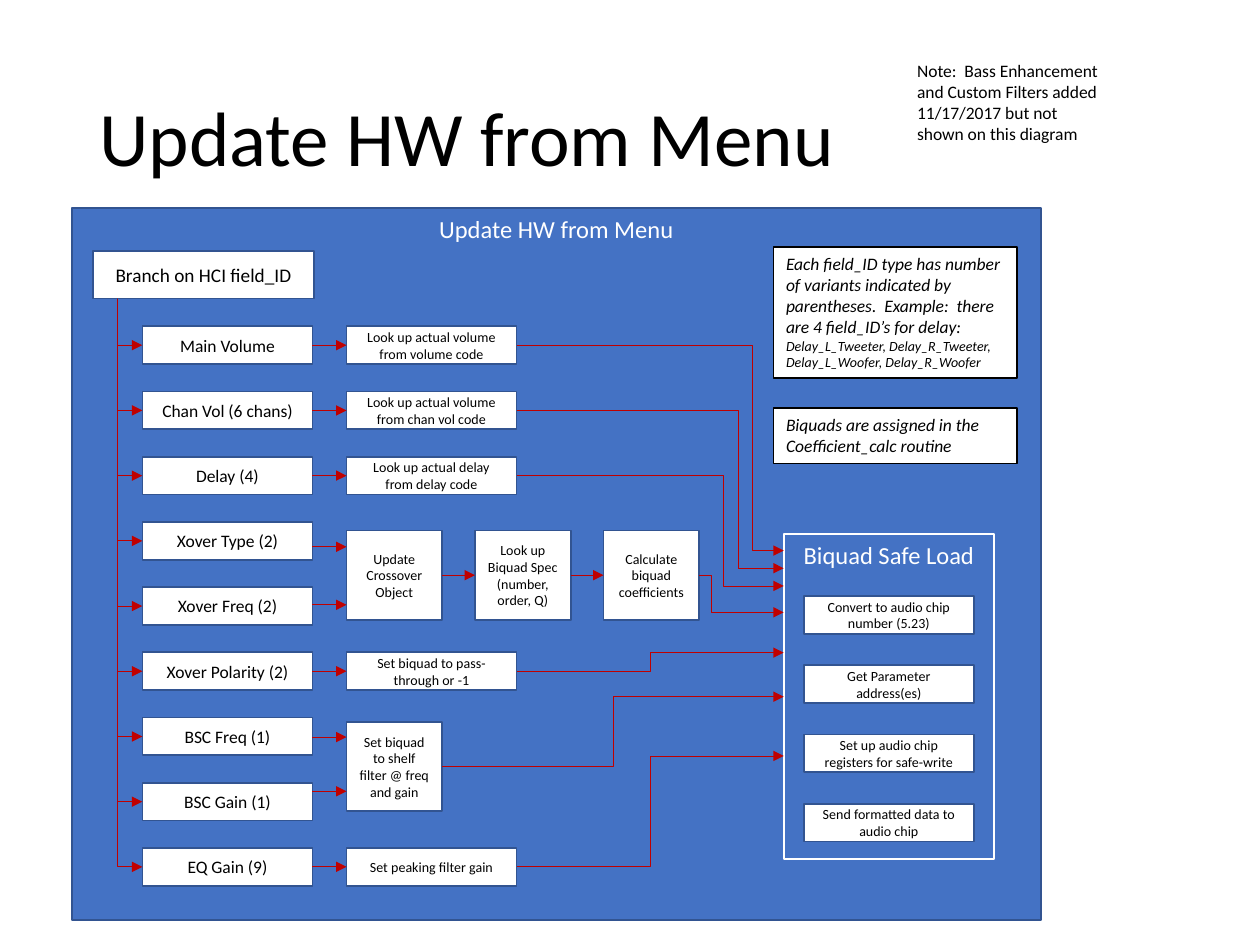
from lxml import etree
from pptx import Presentation
from pptx import util as u
from pptx.dml.color import RGBColor
from pptx.enum import shapes, text
from pptx.oxml.ns import qn

FONT = "Calibri"
BLUE, EDGE, RED = "4472C4", "325491", "C00000"
WHITE, BLACK = "FFFFFF", "000000"
ROW_W, ROW_H, ROW_PITCH = 1.35, 0.3, 4.14 / 8
SQUARE_W, SQUARE_H = 0.76, 0.71
BRANCHES = ["Main Volume", "Chan Vol (6 chans)", "Delay (4)", "Xover Type (2)", "Xover Freq (2)",
            "Xover Polarity (2)", "BSC Freq (1)", "BSC Gain (1)", "EQ Gain (9)"]
ACTIONS = {0: "Look up actual volume from volume code",
           1: "Look up actual volume from chan vol code",
           2: "Look up actual delay from delay code",
           5: "Set biquad to pass-through or -1",
           8: "Set peaking filter gain"}
CROSSOVER = ["Update Crossover Object", "Look up Biquad Spec (number, order, Q)",
             "Calculate biquad coefficients"]
LOAD_STEPS = ["Convert to audio chip number (5.23)", "Get Parameter address(es)",
              "Set up audio chip registers for safe-write", "Send formatted data to audio chip"]


def rgb(value):
    """Return the colour for a hex string."""
    return RGBColor.from_string(value)


def write(sp, runs, color=BLACK, align=text.PP_ALIGN.CENTER, anchor=text.MSO_ANCHOR.MIDDLE,
          italic=False):
    """Fill a shape with one paragraph of (words, size) runs and return it."""
    tf = sp.text_frame
    tf.word_wrap = True
    tf.vertical_anchor = anchor
    p = tf.paragraphs[0]
    p.alignment = align
    for words, size in runs:
        r = p.add_run()
        r.text = words
        r.font.name, r.font.size, r.font.italic = FONT, u.Pt(size), italic
        r.font.color.rgb = rgb(color)
    return p


def add_box(parent, box, runs, fill=WHITE, line=EDGE, **style):
    """Draw a rectangle with text and return it."""
    sp = parent.add_shape(shapes.MSO_SHAPE.RECTANGLE, *map(u.Inches, box))
    sp.shadow.inherit = False
    if fill:
        sp.fill.solid()
        sp.fill.fore_color.rgb = rgb(fill)
    else:
        sp.fill.background()
    sp.line.color.rgb = rgb(line)
    sp.line.width = u.Pt(1)
    write(sp, runs, **style)
    return sp


def add_arrow(s, start, end, bend=None):
    """Draw a red arrow, bent at the given share of its width if there is one."""
    kind = shapes.MSO_CONNECTOR.STRAIGHT if bend is None else shapes.MSO_CONNECTOR.ELBOW
    cx = s.shapes.add_connector(kind, *map(u.Inches, (*start, *end)))
    cx.line.color.rgb = rgb(RED)
    cx.line.width = u.Pt(0.5)
    props = cx._element.spPr
    etree.SubElement(props.find(qn("a:ln")), qn("a:tailEnd"), type="triangle")
    etree.SubElement(props, qn("a:effectLst"))
    if bend is not None:
        guides = props.find(qn("a:prstGeom")).find(qn("a:avLst"))
        etree.SubElement(guides, qn("a:gd"), name="adj1", fmla=f"val {round(bend * 100000)}")
    return cx


def right_middle(sp):
    """Return the middle of a shape's right side in inches."""
    return u.Length(sp.left + sp.width).inches, u.Length(sp.top + sp.height // 2).inches


def join(s, left, right):
    """Connect the facing sides of two boxes."""
    cx = add_arrow(s, right_middle(left), right_middle(right))
    cx.begin_connect(left, 3)
    cx.end_connect(right, 1)


def add_heading(s, box, words, size, anchor, align=text.PP_ALIGN.LEFT, spacing=None):
    """Place free text in its box."""
    sp = s.shapes.add_textbox(*map(u.Inches, box))
    p = write(sp, [(words, size)], anchor=anchor, align=align)
    p.line_spacing = spacing


def add_branches(s, box):
    """Draw the branch box and the rows that hang from it, and return the rows."""
    x, y, w, h = box
    add_box(s.shapes, box, [("Branch on HCI field_ID", 11)])
    rows = []
    for i, name in enumerate(BRANCHES):
        top = y + 0.6 + i * ROW_PITCH
        rows.append(add_box(s.shapes, (x + 0.39, top, ROW_W, ROW_H), [(name, 10)]))
        add_arrow(s, (x + 0.19, y + h), (x + 0.39, top + ROW_H / 2), bend=0)
    return rows


def add_actions(s, x, rows):
    """Draw the actions beside their rows and return them by row number."""
    actions = {}
    for i, words in ACTIONS.items():
        box = (x, u.Length(rows[i].top).inches, ROW_W, ROW_H)
        actions[i] = add_box(s.shapes, box, [(words, 8)])
        join(s, rows[i], actions[i])
    return actions


def add_merge(s, box, words, rows, entries):
    """Draw a box that two rows enter at the given heights, and return it."""
    sp = add_box(s.shapes, box, [(words, 8)])
    for row, y in zip(rows, entries):
        add_arrow(s, (right_middle(row)[0], y), (box[0], y))
    return sp


def add_crossover(s, box, rows):
    """Draw the chain of crossover steps and return the last one."""
    x, y, w, h = box
    last = add_merge(s, box, CROSSOVER[0], rows, (4.34, 4.8))
    for i, words in enumerate(CROSSOVER[1:], 1):
        step = add_box(s.shapes, (x + 1.02 * i, y, w, h), [(words, 8)])
        join(s, last, step)
        last = step
    return last


def add_safe_load(s, box):
    """Draw the load panel with its four steps as a group."""
    x, y, w, h = box
    group = s.shapes.add_group_shape().shapes
    for i, words in enumerate(LOAD_STEPS):
        add_box(group, (x + 0.16, y + 0.49 + 0.55 * i, ROW_W, ROW_H), [(words, 8)])
    add_box(group, box, [("Biquad Safe Load", 14)], fill=None, line=WHITE, color=WHITE,
            anchor=text.MSO_ANCHOR.TOP)


def add_routes(s, x, routes):
    """Lead each box to the load panel at x, given (box, bend x, entry y)."""
    for sp, bend_x, entry in routes:
        start = right_middle(sp)
        add_arrow(s, start, (x, entry), bend=(bend_x - start[0]) / (x - start[0]))


def add_note(s, box, runs):
    """Draw a black-edged note in italics."""
    add_box(s.shapes, box, runs, line=BLACK, align=text.PP_ALIGN.LEFT,
            anchor=text.MSO_ANCHOR.TOP, italic=True)


def add_diagram(s, box):
    """Draw the whole flow on its blue panel."""
    x, y, w, h = box
    add_box(s.shapes, box, [("Update HW from Menu", 14)], fill=BLUE, color=WHITE,
            anchor=text.MSO_ANCHOR.TOP)
    rows = add_branches(s, (x + 0.17, y + 0.34, 1.75, 0.38))
    action_x, load_x = x + 2.18, x + 5.65
    actions = add_actions(s, action_x, rows)
    crossover = add_crossover(s, (action_x, y + 2.56, SQUARE_W, SQUARE_H), rows[3:5])
    shelf = add_merge(s, (action_x, y + 4.08, SQUARE_W, SQUARE_H),
                      "Set biquad to shelf filter @ freq and gain", rows[6:8], (5.85, 6.28))
    add_safe_load(s, (load_x, y + 2.59, 1.67, 2.58))
    add_routes(s, load_x, [
        (actions[0], 5.97, 4.37), (actions[1], 5.86, 4.51), (actions[2], 5.74, 4.65),
        (crossover, 5.65, 4.86), (actions[5], 5.16, 5.18), (shelf, 4.87, 5.53),
        (actions[8], 5.16, 6)])
    add_note(s, (x + 5.57, y + 0.31, 1.93, 1.04), [
        ("Each field_ID type has number of variants indicated by parentheses.  Example:  there "
         "are 4 field_ID’s for delay: ", 10),
        ("Delay_L_Tweeter, Delay_R_Tweeter, Delay_L_Woofer, Delay_R_Woofer", 8)])
    add_note(s, (x + 5.57, y + 1.59, 1.93, 0.44),
             [("Biquads are assigned in the Coefficient_calc routine", 10)])


def main():
    """Build the slide and save it."""
    prs = Presentation()
    prs.slide_width, prs.slide_height = u.Inches(10), u.Inches(7.5)
    s = prs.slides.add_slide(prs.slide_layouts[6])
    add_heading(s, (0.69, 0.4, 8.62, 1.45), "Update HW from Menu", 44,
                text.MSO_ANCHOR.MIDDLE, spacing=0.9)
    add_diagram(s, (0.57, 1.65, 7.69, 5.65))
    add_heading(s, (7.18, 0.43, 1.68, 0.77), "Note:  Bass Enhancement and Custom Filters added "
                "11/17/2017 but not shown on this diagram", 10, text.MSO_ANCHOR.TOP)
    prs.save("out.pptx")


if __name__ == "__main__":
    main()
